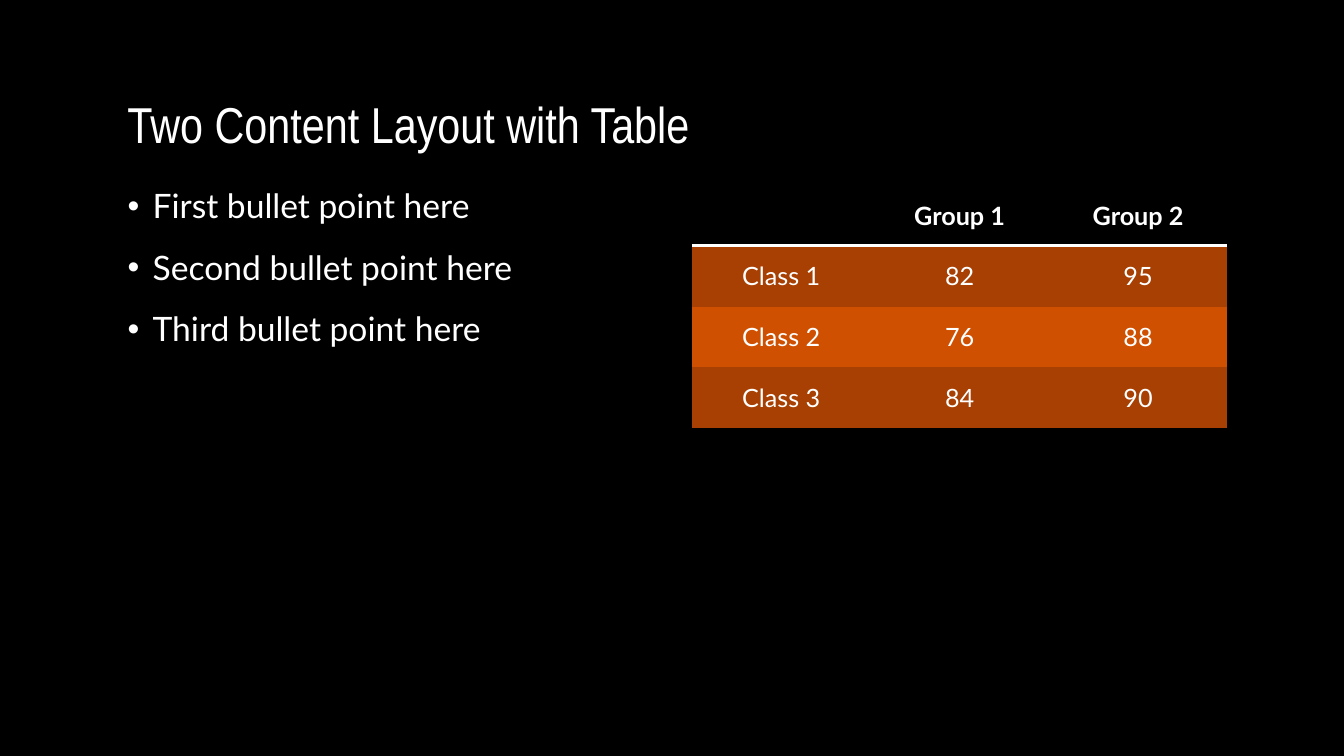
from dataclasses import dataclass

from lxml.etree import SubElement
from pptx import Presentation
from pptx.dml.color import RGBColor
from pptx.enum.text import MSO_ANCHOR as Anchor, PP_ALIGN as Align
from pptx.oxml import parse_xml
from pptx.oxml.ns import nsdecls, qn
from pptx.util import Pt

PX = 9525  # EMU per px, 96 px to the inch


@dataclass(frozen=True)
class Theme:
    background: str = "000000"
    text: str = "FFFFFF"
    dark_band: str = "A74002"
    light_band: str = "D05002"
    title_font: str = "Arial Narrow"
    body_font: str = "Lato"
    title_size: int = 36
    body_size: int = 24
    table_size: int = 18


theme = Theme()


def add_text_box(page, left, top, width, height, anchor):
    box = page.shapes.add_textbox(left * PX, top * PX, width * PX, height * PX)
    box.text_frame.word_wrap = True
    box.text_frame.vertical_anchor = anchor
    return box.text_frame


def add_span(para, text, font, size, bold=False):
    span = para.add_run()
    span.text = text
    span.font.name = font
    span.font.size = Pt(size)
    span.font.bold = bold
    span.font.color.rgb = RGBColor.from_string(theme.text)


# Page
deck = Presentation()
deck.slide_width, deck.slide_height = 1280 * PX, 720 * PX
page = deck.slides.add_slide(deck.slide_layouts[6])
page.background.fill.solid()
page.background.fill.fore_color.rgb = RGBColor.from_string(theme.background)

# Title
title = add_text_box(page, 112, 32, 1056, 120, Anchor.BOTTOM)
para = title.paragraphs[0]
para.line_spacing = 0.9
add_span(para, "Two Content Layout with Table", theme.title_font, theme.title_size)

# Bullet list
bullets = ["First bullet point here", "Second bullet point here", "Third bullet point here"]
body = add_text_box(page, 112, 176, 509, 456, Anchor.TOP)
for index, text in enumerate(bullets):
    para = body.add_paragraph() if index else body.paragraphs[0]
    para.line_spacing = 0.9
    if index:
        para.space_before = Pt(18)
    props = para._p.get_or_add_pPr()
    props.set("marL", str(24 * PX))
    props.set("indent", str(-24 * PX))
    SubElement(props, qn("a:buFont")).set("typeface", "Arial")
    SubElement(props, qn("a:buChar")).set("char", "•")
    add_span(para, text, theme.body_font, theme.body_size)

# Score table, without a built-in style
rows = [
    ["", "Group 1", "Group 2"],
    ["Class 1", "82", "95"],
    ["Class 2", "76", "88"],
    ["Class 3", "84", "90"],
]
column_width, row_height = 170, 58
frame = page.shapes.add_table(
    len(rows), len(rows[0]), 659 * PX, 176 * PX,
    len(rows[0]) * column_width * PX, len(rows) * row_height * PX)
table = frame.table
table.horz_banding = False
style = table._tbl.tblPr.find(qn("a:tableStyleId"))
style.text = "{2D5ABB26-0587-4C30-8999-92F81FD0307C}"

bands = [theme.background, theme.dark_band, theme.light_band, theme.dark_band]
for row_index, (values, band) in enumerate(zip(rows, bands)):
    is_header = row_index == 0
    for column_index, value in enumerate(values):
        cell = table.cell(row_index, column_index)
        cell.vertical_anchor = Anchor.MIDDLE
        cell.fill.solid()
        cell.fill.fore_color.rgb = RGBColor.from_string(band)
        para = cell.text_frame.paragraphs[0]
        para.alignment = Align.CENTER
        if value:
            add_span(para, value, theme.body_font, theme.table_size, is_header)
        if is_header:  # rule under the header row
            rule = parse_xml(
                f'<a:lnB {nsdecls("a")} w="{Pt(2)}"><a:solidFill>'
                f'<a:srgbClr val="{theme.text}"/></a:solidFill></a:lnB>')
            cell._tc.get_or_add_tcPr().insert(0, rule)

deck.save("out.pptx")
